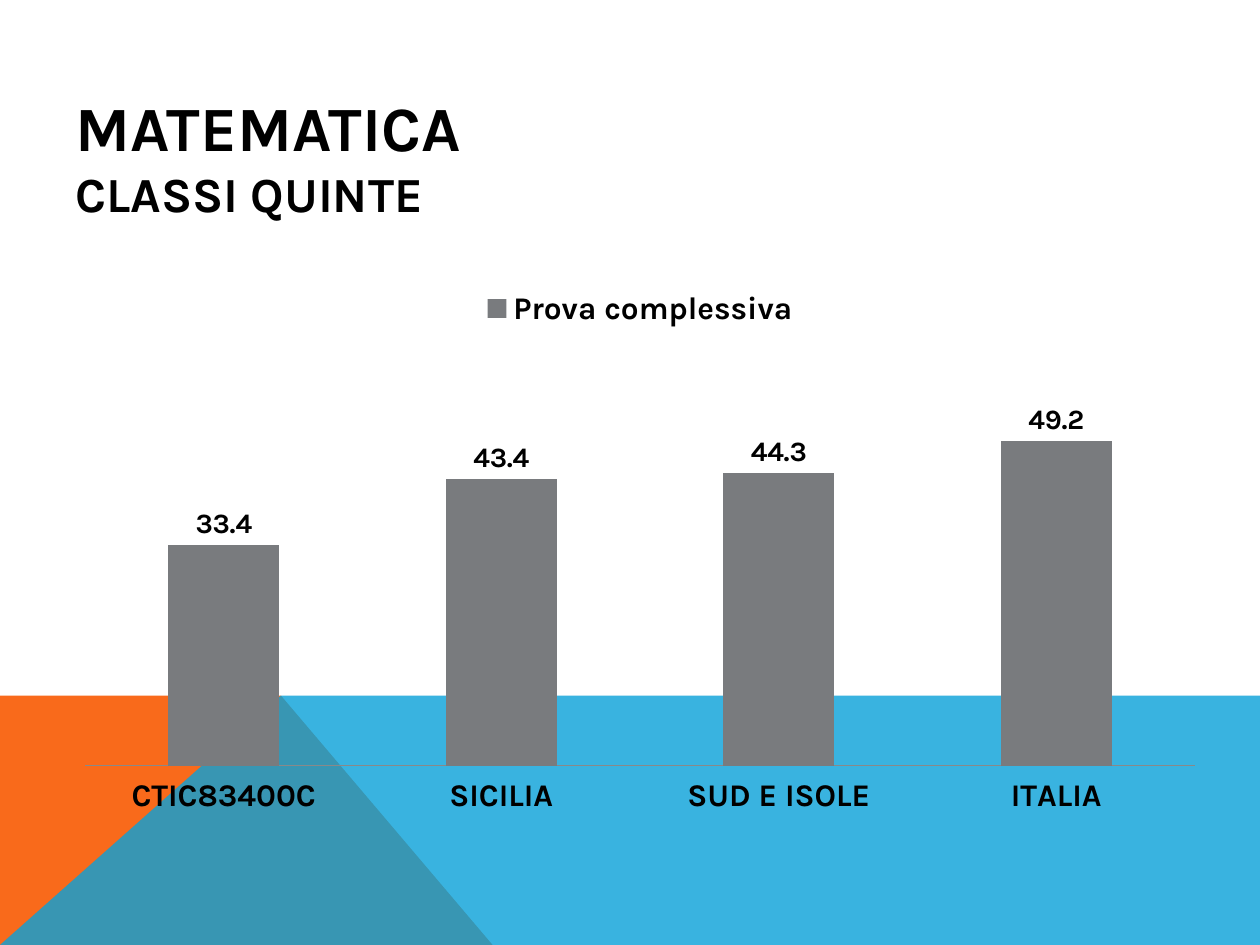
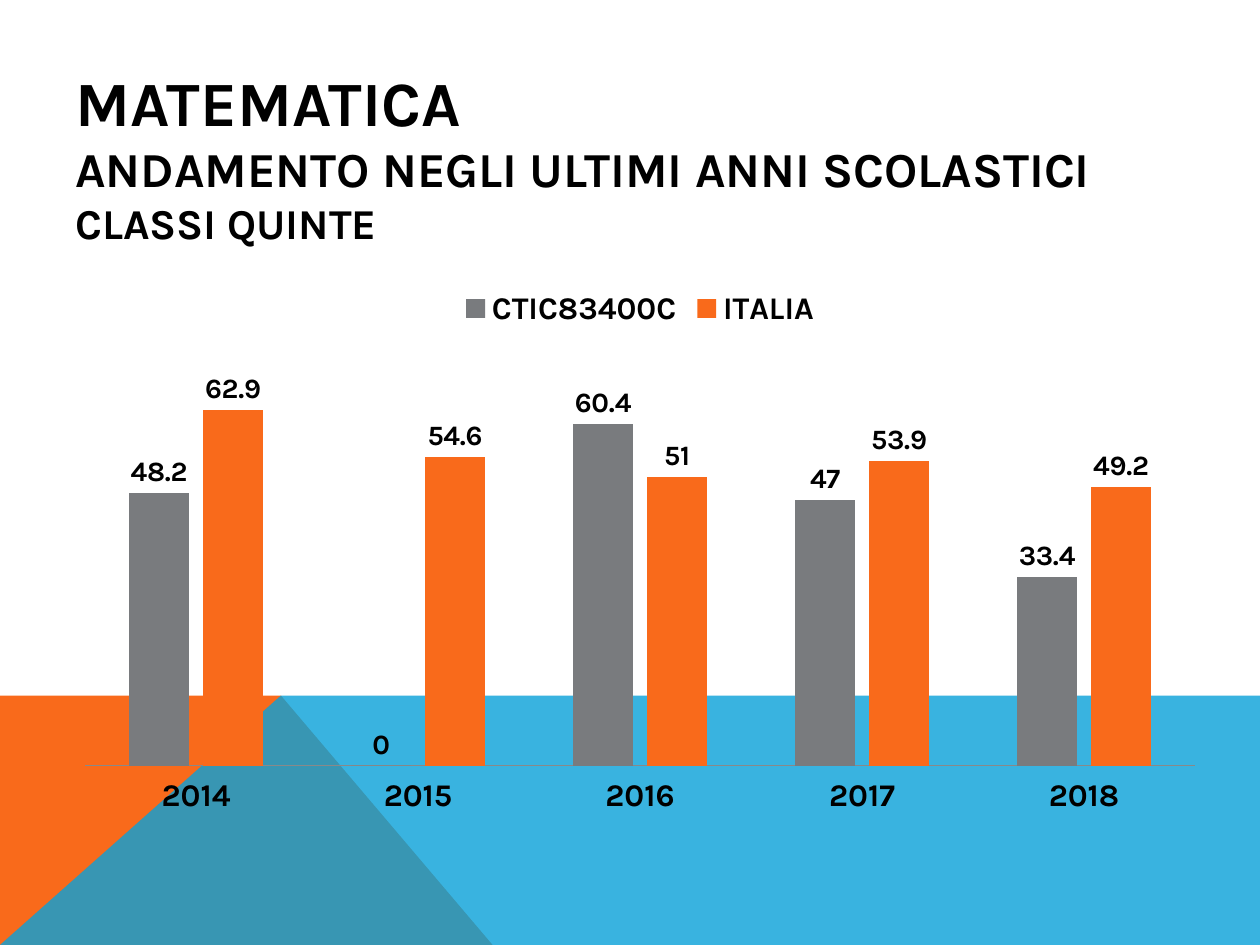
from lxml import etree
from pptx import Presentation
from pptx.chart.data import CategoryChartData
from pptx.dml.color import RGBColor
from pptx.enum.chart import XL_CHART_TYPE, XL_LABEL_POSITION, XL_LEGEND_POSITION, XL_TICK_LABEL_POSITION, XL_TICK_MARK
from pptx.enum.text import MSO_ANCHOR
from pptx.oxml import parse_xml
from pptx.oxml.ns import nsdecls, qn
from pptx.util import Inches, Pt

FONT = "Karla"
COLORS = {"text": "000000", "gray": "797B7E", "orange": "F96A1B", "blue": "08A1D9", "axis": "898989"}
BAND_TOP, BAND_BOTTOM, BAND_PEAK = 5.52, 7.5, 2.23
BANDS = [
    ("orange", 100, [(0, BAND_BOTTOM), (0, BAND_TOP), (BAND_PEAK, BAND_TOP), (3.91, BAND_BOTTOM)]),
    ("blue", 80, [(0, BAND_BOTTOM), (BAND_PEAK, BAND_TOP), (10, BAND_TOP), (10, BAND_BOTTOM)]),
]
PLOT_LAYOUT = {"x": 0, "y": 0.165, "w": 1, "h": 0.688}

SLIDES = [
    {
        "title": [("MATEMATICA", 36), ("CLASSI QUINTE", 28)],
        "categories": ["CTIC83400C", "SICILIA", "SUD E ISOLE", "ITALIA"],
        "series": [("Prova complessiva", [33.4, 43.4, 44.3, 49.2], "gray")],
        "maximum": 60,
    },
    {
        "title": [("MATEMATICA", 36), ("ANDAMENTO NEGLI ULTIMI ANNI SCOLASTICI", 27.9), ("CLASSI QUINTE", 24.3)],
        "categories": ["2014", "2015", "2016", "2017", "2018"],
        "series": [
            ("CTIC83400C", [48.2, 0, 60.4, 47, 33.4], "gray"),
            ("ITALIA", [62.9, 54.6, 51, 53.9, 49.2], "orange"),
        ],
        "maximum": 70,
    },
]


def color(name):
    return RGBColor.from_string(COLORS[name])


def style_font(font, size):
    font.name = FONT
    font.size = Pt(size)
    font.bold = True
    font.color.rgb = color("text")


presentation = Presentation()
presentation.slide_width = Inches(10)
presentation.slide_height = Inches(7.5)

for content in SLIDES:
    slide = presentation.slides.add_slide(presentation.slide_layouts[6])

    # Coloured bands at the foot
    for fill_name, opacity, points in BANDS:
        corners = [(Inches(x), Inches(y)) for x, y in points]
        builder = slide.shapes.build_freeform(*corners[0])
        builder.add_line_segments(corners[1:], close=True)
        band = builder.convert_to_shape()
        band.shadow.inherit = False
        band.line.fill.background()
        band.fill.solid()
        band.fill.fore_color.rgb = color(fill_name)
        if opacity < 100:
            fill_color = band.fill._xPr.find(qn("a:solidFill"))[0]
            etree.SubElement(fill_color, qn("a:alpha"), val=str(opacity * 1000))

    # Title
    title = slide.shapes.add_textbox(Inches(0.5), Inches(0.37), Inches(9), Inches(1.73))
    title.text_frame.word_wrap = True
    title.text_frame.vertical_anchor = MSO_ANCHOR.MIDDLE
    paragraph = title.text_frame.paragraphs[0]
    for index, (text, size) in enumerate(content["title"]):
        if index:
            paragraph.add_line_break()
        run = paragraph.add_run()
        run.text = text
        style_font(run.font, size)

    # Column chart
    chart_data = CategoryChartData()
    chart_data.categories = content["categories"]
    for name, values, _ in content["series"]:
        chart_data.add_series(name, values)
    chart = slide.shapes.add_chart(
        XL_CHART_TYPE.COLUMN_CLUSTERED, Inches(0.67), Inches(2.18), Inches(8.82), Inches(4.57), chart_data
    ).chart
    chart.has_title = False
    style_font(chart.font, 18)
    chart.has_legend = True
    chart.legend.position = XL_LEGEND_POSITION.TOP
    chart.legend.include_in_layout = False
    style_font(chart.legend.font, 18)

    chart.category_axis.major_tick_mark = XL_TICK_MARK.NONE
    chart.category_axis.tick_label_position = XL_TICK_LABEL_POSITION.LOW
    chart.category_axis.format.line.color.rgb = color("axis")
    chart.category_axis.format.line.width = Pt(0.75)
    style_font(chart.category_axis.tick_labels.font, 18)
    chart.value_axis.visible = False
    chart.value_axis.has_major_gridlines = False
    chart.value_axis.minimum_scale = 0
    chart.value_axis.maximum_scale = content["maximum"]

    plot = chart.plots[0]
    plot.gap_width = 150
    plot.overlap = -25
    plot.vary_by_categories = False
    for series, (_, _, fill_name) in zip(plot.series, content["series"]):
        series.format.fill.solid()
        series.format.fill.fore_color.rgb = color(fill_name)
        labels = series.data_labels
        labels.show_value = True
        labels.position = XL_LABEL_POSITION.OUTSIDE_END
        style_font(labels.font, 16)

    # Fixed inner plot area, as fractions of the chart
    plot_area = chart._chartSpace.chart.plotArea
    for layout in plot_area.findall(qn("c:layout")):
        plot_area.remove(layout)
    modes = '<c:layoutTarget val="inner"/><c:xMode val="edge"/><c:yMode val="edge"/>'
    sizes = "".join(f'<c:{key} val="{value}"/>' for key, value in PLOT_LAYOUT.items())
    plot_area.insert(0, parse_xml(
        f'<c:layout {nsdecls("c")}><c:manualLayout>{modes}{sizes}</c:manualLayout></c:layout>'
    ))

presentation.save("out.pptx")
